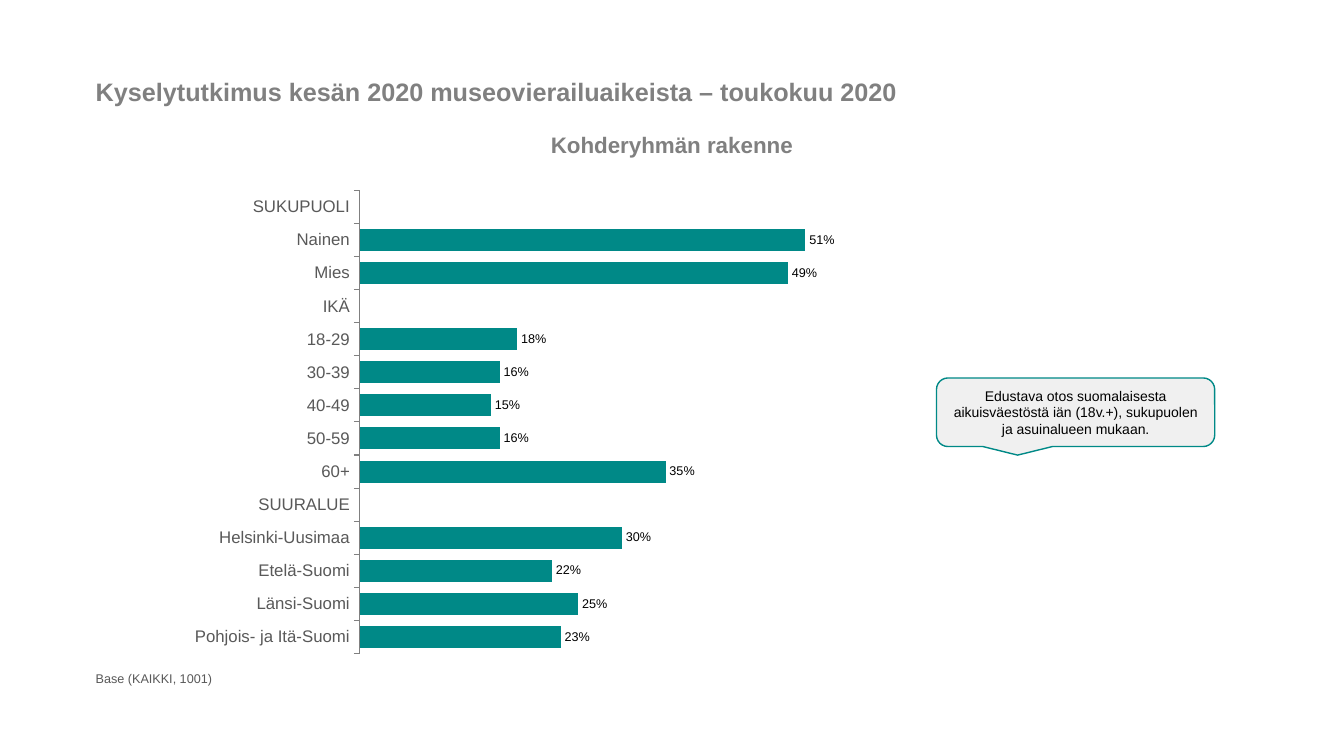
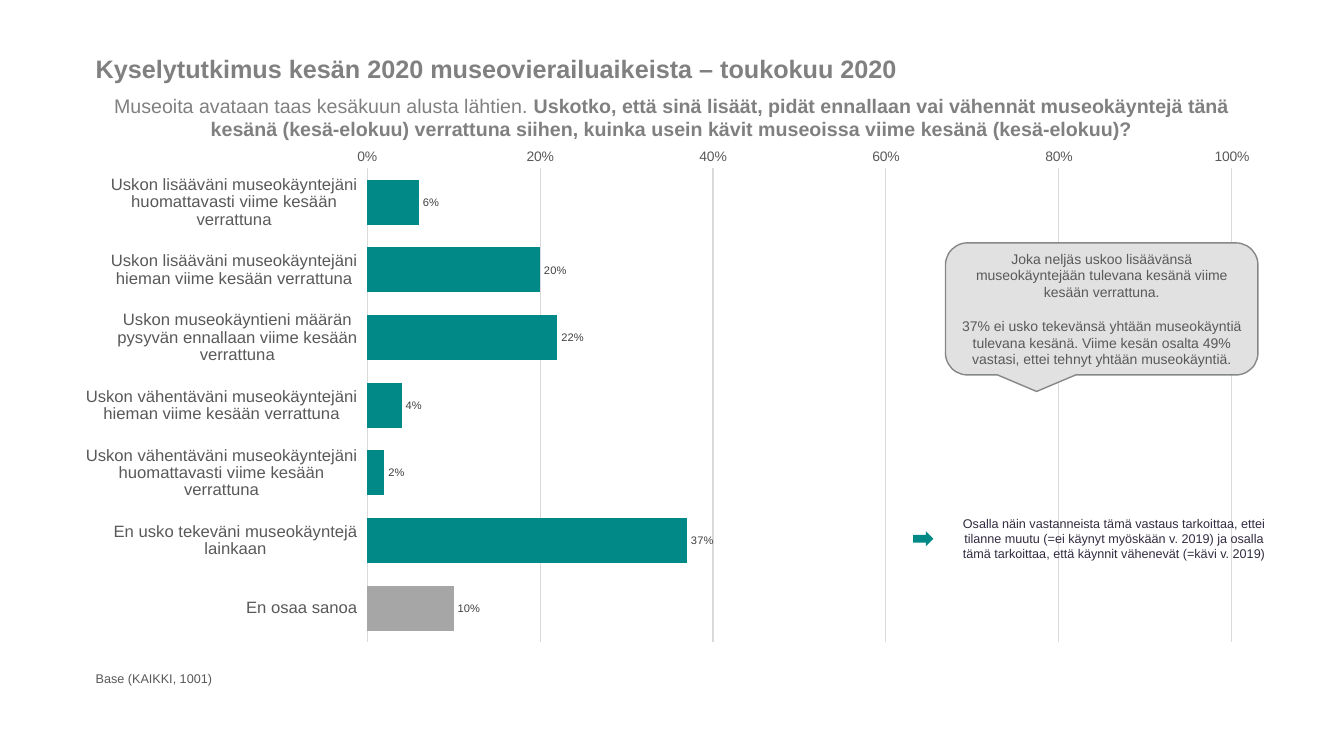
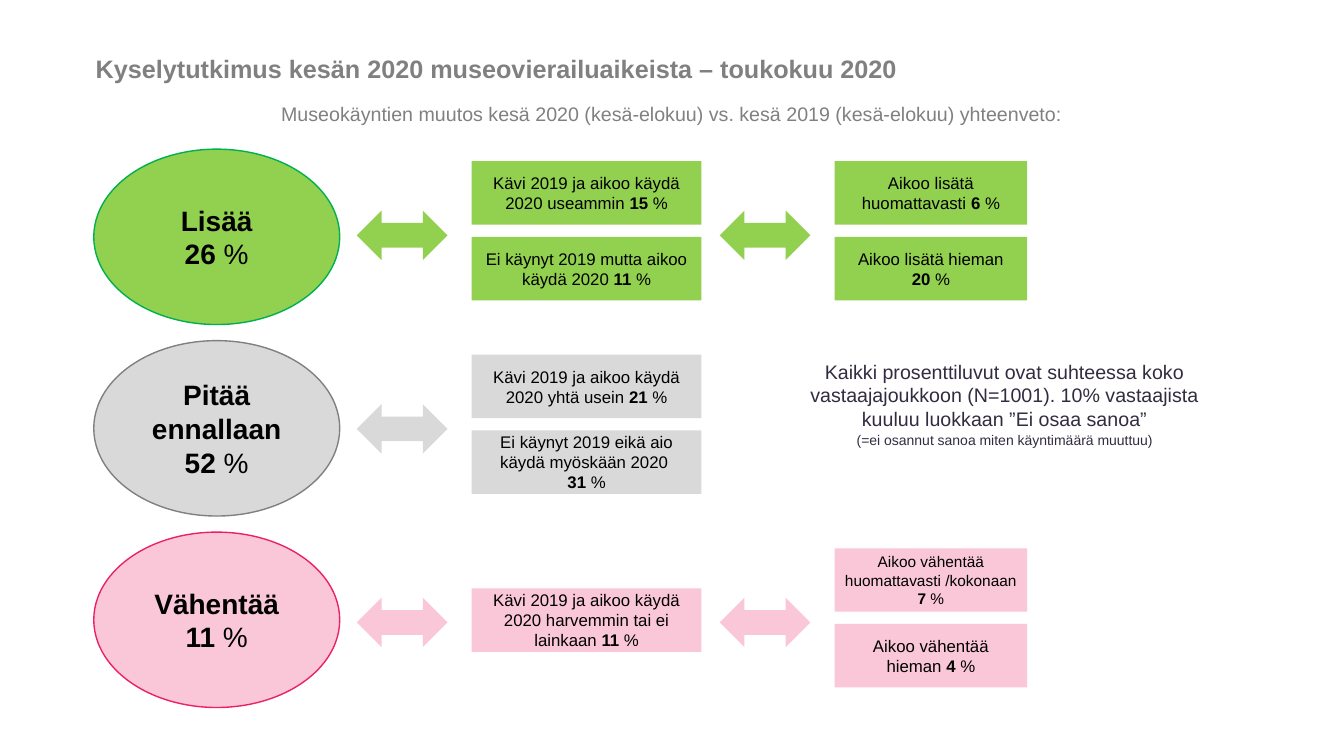
from dataclasses import dataclass, field

from lxml import etree
from pptx import Presentation, util as u
from pptx.chart.data import CategoryChartData
from pptx.dml.color import RGBColor
from pptx.enum import chart as ch, shapes, text
from pptx.oxml.ns import qn

# Shared look
FONT = "Arial"
TEAL, GREY, DARK, BLACK, PLUM = "008987", "808080", "595959", "000000", "332C41"
PALE, SILVER = "D9D9D9", "A6A6A6"
TITLE = "Kyselytutkimus kesän 2020 museovierailuaikeista – toukokuu 2020"
BASE = "Base (KAIKKI, 1001)"
LEFT, WIDE = 6.38, 87.22
KIND = shapes.MSO_SHAPE

deck = Presentation()
deck.slide_width, deck.slide_height = u.Inches(13.33), u.Inches(7.5)


@dataclass
class Box:
    """A frame in percent of the slide's width and height."""
    x: float
    y: float
    w: float
    h: float

    def emu(self) -> list[int]:
        wide, high = deck.slide_width, deck.slide_height
        return [u.Emu(round(part * size / 100)) for part, size in
                ((self.x, wide), (self.y, high), (self.w, wide), (self.h, high))]


@dataclass
class Style:
    size: float
    color: str = BLACK
    center: bool = True
    gap: float = 0


@dataclass
class Bars:
    """A bar chart with its plot area in shares of the frame."""
    box: Box
    plot: tuple
    rows: dict
    tick: ch.XL_TICK_MARK
    line: str
    size: float
    ink: str
    overlap: int = 0
    scale: bool = False
    muted: list = field(default_factory=list)


@dataclass
class Band:
    """One answer group of the summary; cards are (slot, words, size)."""
    head: str
    fill: str
    line: str
    mid: list
    end: list


def tint(code: str) -> RGBColor:
    return RGBColor.from_string(code)


def write(frame, words: str, style: Style) -> None:
    """Fill a frame; newlines split paragraphs and *stars* mark bold."""
    frame.word_wrap = True
    for i, row in enumerate(words.split("\n")):
        para = frame.paragraphs[0] if i == 0 else frame.add_paragraph()
        para.alignment = text.PP_ALIGN.CENTER if style.center else text.PP_ALIGN.LEFT
        if i and style.gap:
            para.space_before = u.Pt(style.gap)
        para.font.name, para.font.size = FONT, u.Pt(style.size)
        para.font.color.rgb = tint(style.color)
        for j, part in enumerate(row.split("*")):
            if part:
                run = para.add_run()
                run.text, run.font.bold = part, j % 2 == 1


def label(slide, box: Box, words: str, style: Style, middle: bool = False) -> None:
    frame = slide.shapes.add_textbox(*box.emu()).text_frame
    if middle:
        frame.vertical_anchor = text.MSO_ANCHOR.MIDDLE
    write(frame, words, style)


def draw(slide, kind, box: Box, fill: str, line: str = "",
         words: str = "", style: Style = Style(12)) -> None:
    shape = slide.shapes.add_shape(kind, *box.emu())
    shape.shadow.inherit = False
    shape.fill.solid()
    shape.fill.fore_color.rgb = tint(fill)
    if line:
        shape.line.color.rgb = tint(line)
        shape.line.width = u.Pt(1)
    else:
        shape.line.fill.background()
    if words:
        shape.text_frame.vertical_anchor = text.MSO_ANCHOR.MIDDLE
        write(shape.text_frame, words, style)


def page(top: float, lead: str, box: Box, size: float, base: bool = True):
    slide = deck.slides.add_slide(deck.slide_layouts[6])
    label(slide, Box(LEFT, top, WIDE, 5.33), f"*{TITLE}*", Style(18, GREY, False))
    label(slide, box, lead, Style(size, GREY), True)
    if base:
        label(slide, Box(LEFT, 88.13, WIDE, 3.73), BASE, Style(9, DARK, False))
    return slide


def dress(font, size: float, color: str) -> None:
    font.name, font.size = FONT, u.Pt(size)
    font.color.rgb = tint(color)


def place(chart, plot: tuple) -> None:
    """Fix the inner plot area."""
    area = chart._chartSpace.chart.plotArea
    for old in area.findall(qn("c:layout")):
        area.remove(old)
    layout = etree.Element(qn("c:layout"))
    area.insert(0, layout)
    manual = etree.SubElement(layout, qn("c:manualLayout"))
    pairs = [("layoutTarget", "inner"), ("xMode", "edge"), ("yMode", "edge"),
             *zip("xywh", plot)]
    for tag, val in pairs:
        etree.SubElement(manual, qn(f"c:{tag}")).set("val", str(val))


def graph(slide, bars: Bars) -> None:
    data = CategoryChartData(number_format="0%")
    data.categories = list(bars.rows)
    data.add_series("Series 1", [None if v is None else v / 100
                                 for v in bars.rows.values()])
    chart = slide.shapes.add_chart(ch.XL_CHART_TYPE.BAR_CLUSTERED,
                                   *bars.box.emu(), data).chart
    chart.has_legend = chart.has_title = False
    dress(chart.font, 10, BLACK)
    place(chart, bars.plot)

    # Bars and their values
    plot = chart.plots[0]
    plot.gap_width, plot.overlap, plot.vary_by_categories = 50, bars.overlap, False
    series = plot.series[0]
    fills = [(series.format.fill, TEAL)]
    fills += [(series.points[i].format.fill, SILVER) for i in bars.muted]
    for fill, color in fills:
        fill.solid()
        fill.fore_color.rgb = tint(color)
    tags = series.data_labels
    tags.show_value, tags.position = True, ch.XL_LABEL_POSITION.OUTSIDE_END
    tags.number_format, tags.number_format_is_linked = "0%", False
    dress(tags.font, bars.size, bars.ink)

    # Axes
    cat, val = chart.category_axis, chart.value_axis
    cat.reverse_order, cat.crosses = True, ch.XL_AXIS_CROSSES.MAXIMUM
    cat.major_tick_mark = bars.tick
    cat.tick_label_position = ch.XL_TICK_LABEL_POSITION.LOW
    cat.format.line.color.rgb = tint(bars.line)
    cat.format.line.width = u.Pt(0.75)
    dress(cat.tick_labels.font, 12, DARK)
    val.minimum_scale, val.maximum_scale, val.major_unit = 0, 1, 0.2
    val.has_major_gridlines = val.visible = bars.scale
    if bars.scale:
        val.major_tick_mark = ch.XL_TICK_MARK.NONE
        val.format.line.fill.background()
        grid = val.major_gridlines.format.line
        grid.color.rgb, grid.width = tint(PALE), u.Pt(0.75)
        names = val.tick_labels
        names.number_format, names.number_format_is_linked = "0%", False
        dress(names.font, 10, DARK)


def sample() -> None:
    slide = page(9.47, "*Kohderyhmän rakenne*", Box(LEFT, 16.67, WIDE, 4.93), 16)
    rows = {"SUKUPUOLI": None, "Nainen": 51, "Mies": 49,
            "IKÄ": None, "18-29": 18, "30-39": 16, "40-49": 15, "50-59": 16, "60+": 35,
            "SUURALUE": None, "Helsinki-Uusimaa": 30, "Etelä-Suomi": 22,
            "Länsi-Suomi": 25, "Pohjois- ja Itä-Suomi": 23}
    graph(slide, Bars(Box(LEFT, 23.33, 86.78, 64.93), (0.235, 0.029, 0.749, 0.943),
                      rows, ch.XL_TICK_MARK.OUTSIDE, GREY, 9, BLACK, overlap=-10))
    draw(slide, KIND.ROUNDED_RECTANGULAR_CALLOUT, Box(69.68, 50, 20.7, 9.07),
         "F0F0F0", TEAL, "Edustava otos suomalaisesta aikuisväestöstä iän (18v.+), "
         "sukupuolen ja asuinalueen mukaan.", Style(10))


def intent() -> None:
    lead = ("Museoita avataan taas kesäkuun alusta lähtien. *Uskotko, että sinä lisäät, "
            "pidät ennallaan vai vähennät museokäyntejä tänä kesänä (kesä-elokuu) "
            "verrattuna siihen, kuinka usein kävit museoissa viime kesänä (kesä-elokuu)?*")
    slide = page(6.4, lead, Box(LEFT, 11.73, WIDE, 7.6), 14)
    rows = {"Uskon lisääväni museokäyntejäni huomattavasti viime kesään verrattuna": 6,
            "Uskon lisääväni museokäyntejäni hieman viime kesään verrattuna": 20,
            "Uskon museokäyntieni määrän pysyvän ennallaan viime kesään verrattuna": 22,
            "Uskon vähentäväni museokäyntejäni hieman viime kesään verrattuna": 4,
            "Uskon vähentäväni museokäyntejäni huomattavasti viime kesään verrattuna": 2,
            "En usko tekeväni museokäyntejä lainkaan": 37,
            "En osaa sanoa": 10}
    graph(slide, Bars(Box(LEFT, 19.73, 87.9, 68.53), (0.232, 0.014, 0.738, 0.936),
                      rows, ch.XL_TICK_MARK.NONE, PALE, 8, "404040",
                      scale=True, muted=[6]))
    draw(slide, KIND.ROUNDED_RECTANGULAR_CALLOUT, Box(70.35, 32.13, 23.25, 17.47),
         "E1E1E1", "858985",
         "Joka neljäs uskoo lisäävänsä museokäyntejään tulevana kesänä viime kesään "
         "verrattuna.\n37% ei usko tekevänsä yhtään museokäyntiä tulevana kesänä. Viime "
         "kesän osalta 49% vastasi, ettei tehnyt yhtään museokäyntiä.",
         Style(10, DARK, gap=12))
    label(slide, Box(70.58, 67.6, 24.6, 7.47),
          "Osalla näin vastanneista tämä vastaus tarkoittaa, ettei tilanne muutu (=ei "
          "käynyt myöskään v. 2019) ja osalla tämä tarkoittaa, että käynnit vähenevät "
          "(=kävi v. 2019)", Style(9, PLUM))
    draw(slide, KIND.RIGHT_ARROW, Box(67.95, 70.27, 1.5, 2), TEAL)


def summary() -> None:
    slide = page(6.4, "Museokäyntien muutos kesä 2020 (kesä-elokuu) vs. kesä 2019 "
                 "(kesä-elokuu) yhteenveto:", Box(LEFT, 12.8, WIDE, 4.53), 14, False)
    bands = [
        Band("*Lisää*\n*26* %", "92D050", "00B050",
             [(0, "Kävi 2019 ja aikoo käydä 2020 useammin *15* %", 12),
              (1, "Ei käynyt 2019 mutta aikoo käydä 2020 *11* %", 12)],
             [(0, "Aikoo lisätä huomattavasti *6* %", 12),
              (1, "Aikoo lisätä hieman\n*20* %", 12)]),
        Band("*Pitää ennallaan*\n*52* %", PALE, GREY,
             [(0, "Kävi 2019 ja aikoo käydä 2020 yhtä usein *21* %", 12),
              (1, "Ei käynyt 2019 eikä aio käydä myöskään 2020 \n*31* %", 12)], []),
        Band("*Vähentää*\n*11* %", "FAC7D9", "EC206A",
             [(0.53, "Kävi 2019 ja aikoo käydä 2020 harvemmin tai ei lainkaan *11* %", 12)],
             [(0, "Aikoo vähentää huomattavasti /kokonaan *7* %", 11),
              (1, "Aikoo vähentää hieman *4* %", 12)]),
    ]
    for i, band in enumerate(bands):
        draw(slide, KIND.OVAL, Box(6.98, 19.73 + 25.33 * i, 18.3, 23.2),
             band.fill, band.line, band.head, Style(20))
        drop = 25.6 * i
        # Each column of cards follows its own arrow
        for start, x, w, cards in ((26.55, 35.1, 17.1, band.mid),
                                   (53.55, 62.1, 14.33, band.end)):
            if cards:
                draw(slide, KIND.LEFT_RIGHT_ARROW,
                     Box(start, 27.87 + drop, 6.75, 6.53), band.fill)
            for slot, words, size in cards:
                draw(slide, KIND.RECTANGLE, Box(x, 21.33 + drop + 10 * slot, w, 8.4),
                     band.fill, "", words, Style(size))
    # Note on the shares, with a smaller last line
    label(slide, Box(57.68, 46.93, 34.13, 10),
          "Kaikki prosenttiluvut ovat suhteessa koko vastaajajoukkoon (N=1001). "
          "10% vastaajista kuuluu luokkaan ”Ei osaa sanoa”", Style(14, PLUM))
    label(slide, Box(57.68, 56.4, 34.13, 3.6),
          "(=ei osannut sanoa miten käyntimäärä muuttuu)", Style(10, PLUM))


def main() -> None:
    sample()
    intent()
    summary()
    deck.save("out.pptx")


if __name__ == "__main__":
    main()
